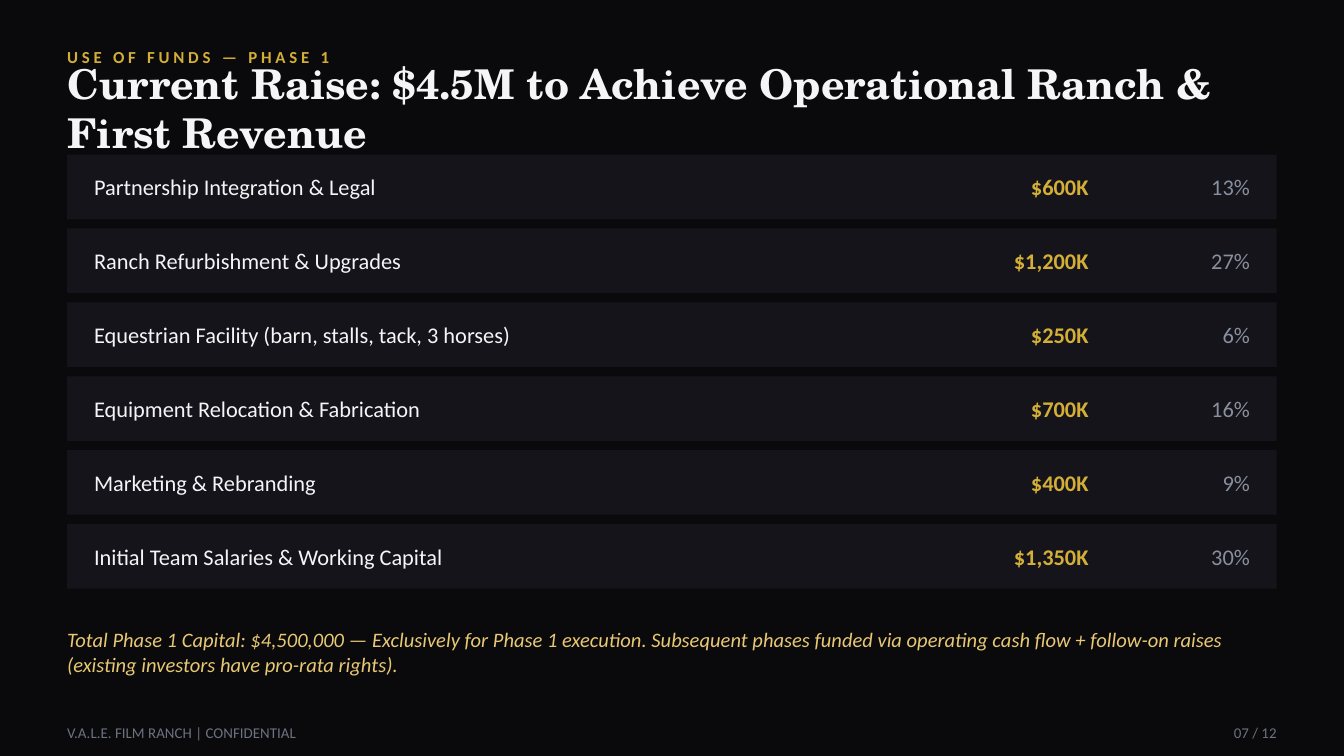
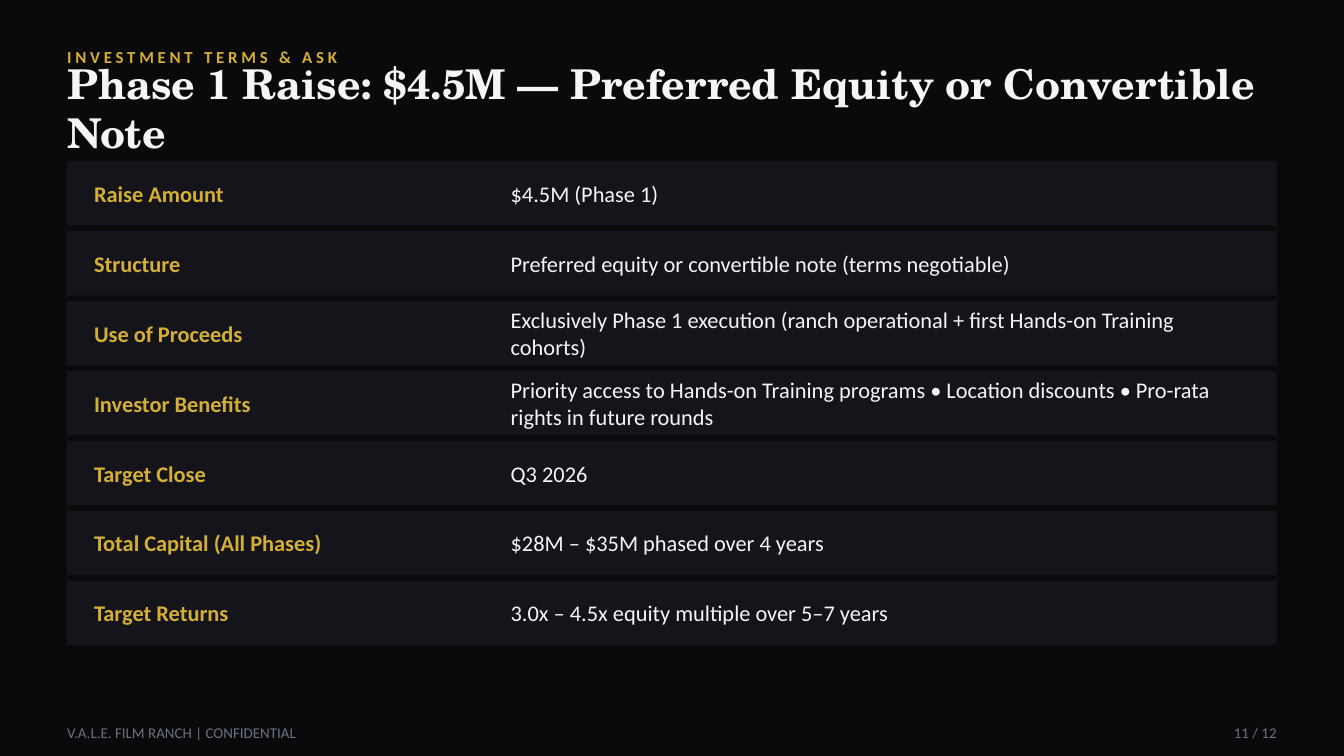
from dataclasses import dataclass

from pptx import Presentation
from pptx import util as u
from pptx.dml.color import RGBColor
from pptx.enum import shapes, text


@dataclass(frozen=True)
class Theme:
    background: str = "0A0A0C"
    band: str = "14141A"
    gold: str = "D4AF37"
    pale_gold: str = "E8C872"
    light: str = "F5F5F7"
    grey: str = "8A8F9E"
    footer_grey: str = "6B7280"
    title_font: str = "TeX Gyre Schola"
    body_font: str = "Calibri"
    title_size: int = 22
    row_size: int = 12
    note_size: int = 11
    eyebrow_size: int = 9
    footer_size: int = 8


@dataclass(frozen=True)
class Column:
    """Text style of one column; left is measured from the band's edge."""
    left: float
    width: float
    color: str
    bold: bool = False
    align_right: bool = False


THEME = Theme()
SLIDE_WIDTH = 10
SLIDE_HEIGHT = SLIDE_WIDTH * 9 / 16
MARGIN = 0.5
CONTENT_WIDTH = SLIDE_WIDTH - 2 * MARGIN
BAND_HEIGHT, BAND_INSET = 0.48, 0.1
PAGE_COUNT = 12
FOOTER = "V.A.L.E. FILM RANCH | CONFIDENTIAL"

FUND_COLUMNS = (
    Column(0.2, 5.5, THEME.light),
    Column(5.8, 1.8, THEME.gold, bold=True, align_right=True),
    Column(7.7, 1.1, THEME.grey, align_right=True),
)
TERM_COLUMNS = (
    Column(0.2, 3, THEME.gold, bold=True),
    Column(3.3, 5.5, THEME.light),
)

FUNDS = (
    ("Partnership Integration & Legal", "$600K", "13%"),
    ("Ranch Refurbishment & Upgrades", "$1,200K", "27%"),
    ("Equestrian Facility (barn, stalls, tack, 3 horses)", "$250K", "6%"),
    ("Equipment Relocation & Fabrication", "$700K", "16%"),
    ("Marketing & Rebranding", "$400K", "9%"),
    ("Initial Team Salaries & Working Capital", "$1,350K", "30%"),
)
FUNDS_NOTE = (
    "Total Phase 1 Capital: $4,500,000 — Exclusively for Phase 1 execution. "
    "Subsequent phases funded via operating cash flow + follow-on raises "
    "(existing investors have pro-rata rights)."
)
TERMS = (
    ("Raise Amount", "$4.5M (Phase 1)"),
    ("Structure", "Preferred equity or convertible note (terms negotiable)"),
    ("Use of Proceeds", "Exclusively Phase 1 execution "
     "(ranch operational + first Hands-on Training cohorts)"),
    ("Investor Benefits", "Priority access to Hands-on Training programs "
     "• Location discounts • Pro-rata rights in future rounds"),
    ("Target Close", "Q3 2026"),
    ("Total Capital (All Phases)", "$28M – $35M phased over 4 years"),
    ("Target Returns", "3.0x – 4.5x equity multiple over 5–7 years"),
)


def add_text(slide, words, left, top, width, height, *, size, color,
             font=THEME.body_font, bold=False, italic=False,
             align_right=False, spacing=0):
    """Add middle-anchored text; spacing is in points per letter."""
    box = slide.shapes.add_textbox(*map(u.Inches, (left, top, width, height)))
    frame = box.text_frame
    frame.word_wrap = True
    frame.vertical_anchor = text.MSO_ANCHOR.MIDDLE
    frame.margin_left = frame.margin_right = 0
    frame.margin_top = frame.margin_bottom = 0
    paragraph = frame.paragraphs[0]
    paragraph.alignment = (text.PP_ALIGN.RIGHT if align_right
                           else text.PP_ALIGN.LEFT)
    run = paragraph.add_run()
    run.text = words
    run.font.name = font
    run.font.size = u.Pt(size)
    run.font.bold = bold
    run.font.italic = italic
    run.font.color.rgb = RGBColor.from_string(color)
    if spacing:
        run._r.get_or_add_rPr().set("spc", str(spacing * 100))


def add_header(slide, eyebrow, title, left, top, width):
    add_text(slide, eyebrow, left, top, width, 0.25, size=THEME.eyebrow_size,
             color=THEME.gold, bold=True, spacing=2)
    add_text(slide, title, left, top + 0.25, width, 0.5, size=THEME.title_size,
             color=THEME.light, font=THEME.title_font, bold=True)


def add_footer(slide, page, left, top, width):
    style = dict(size=THEME.footer_size, color=THEME.footer_grey)
    add_text(slide, FOOTER, left, top, 6, 0.2, **style)
    add_text(slide, f"{page:02} / {PAGE_COUNT}", left + width - 1, top, 1, 0.2,
             align_right=True, **style)


def add_band(slide, cells, columns, left, top, width):
    band = slide.shapes.add_shape(
        shapes.MSO_SHAPE.RECTANGLE,
        *map(u.Inches, (left, top, width, BAND_HEIGHT)))
    band.shadow.inherit = False
    band.fill.solid()
    band.fill.fore_color.rgb = RGBColor.from_string(THEME.band)
    band.line.fill.background()
    for words, column in zip(cells, columns):
        add_text(slide, words, left + column.left, top + BAND_INSET,
                 column.width, BAND_HEIGHT - 2 * BAND_INSET,
                 size=THEME.row_size, color=column.color, bold=column.bold,
                 align_right=column.align_right)


def add_bands(slide, rows, columns, left, top, width, pitch):
    for index, cells in enumerate(rows):
        add_band(slide, cells, columns, left, top + index * pitch, width)


def add_base_slide(deck, eyebrow, title, page):
    slide = deck.slides.add_slide(deck.slide_layouts[6])
    slide.background.fill.solid()
    slide.background.fill.fore_color.rgb = RGBColor.from_string(THEME.background)
    add_header(slide, eyebrow, title, MARGIN, 0.3, CONTENT_WIDTH)
    add_footer(slide, page, MARGIN, 5.35, CONTENT_WIDTH)
    return slide


def add_funds_slide(deck):
    slide = add_base_slide(
        deck, "USE OF FUNDS — PHASE 1",
        "Current Raise: $4.5M to Achieve Operational Ranch & First Revenue", 7)
    add_bands(slide, FUNDS, FUND_COLUMNS, MARGIN, 1.15, CONTENT_WIDTH, 0.55)
    add_text(slide, FUNDS_NOTE, MARGIN, 4.6, CONTENT_WIDTH, 0.5,
             size=THEME.note_size, color=THEME.pale_gold, italic=True)


def add_terms_slide(deck):
    slide = add_base_slide(
        deck, "INVESTMENT TERMS & ASK",
        "Phase 1 Raise: $4.5M — Preferred Equity or Convertible Note", 11)
    add_bands(slide, TERMS, TERM_COLUMNS, MARGIN, 1.2, CONTENT_WIDTH, 0.52)


def main():
    deck = Presentation()
    deck.slide_width = u.Inches(SLIDE_WIDTH)
    deck.slide_height = u.Inches(SLIDE_HEIGHT)
    add_funds_slide(deck)
    add_terms_slide(deck)
    deck.save("out.pptx")


if __name__ == "__main__":
    main()
